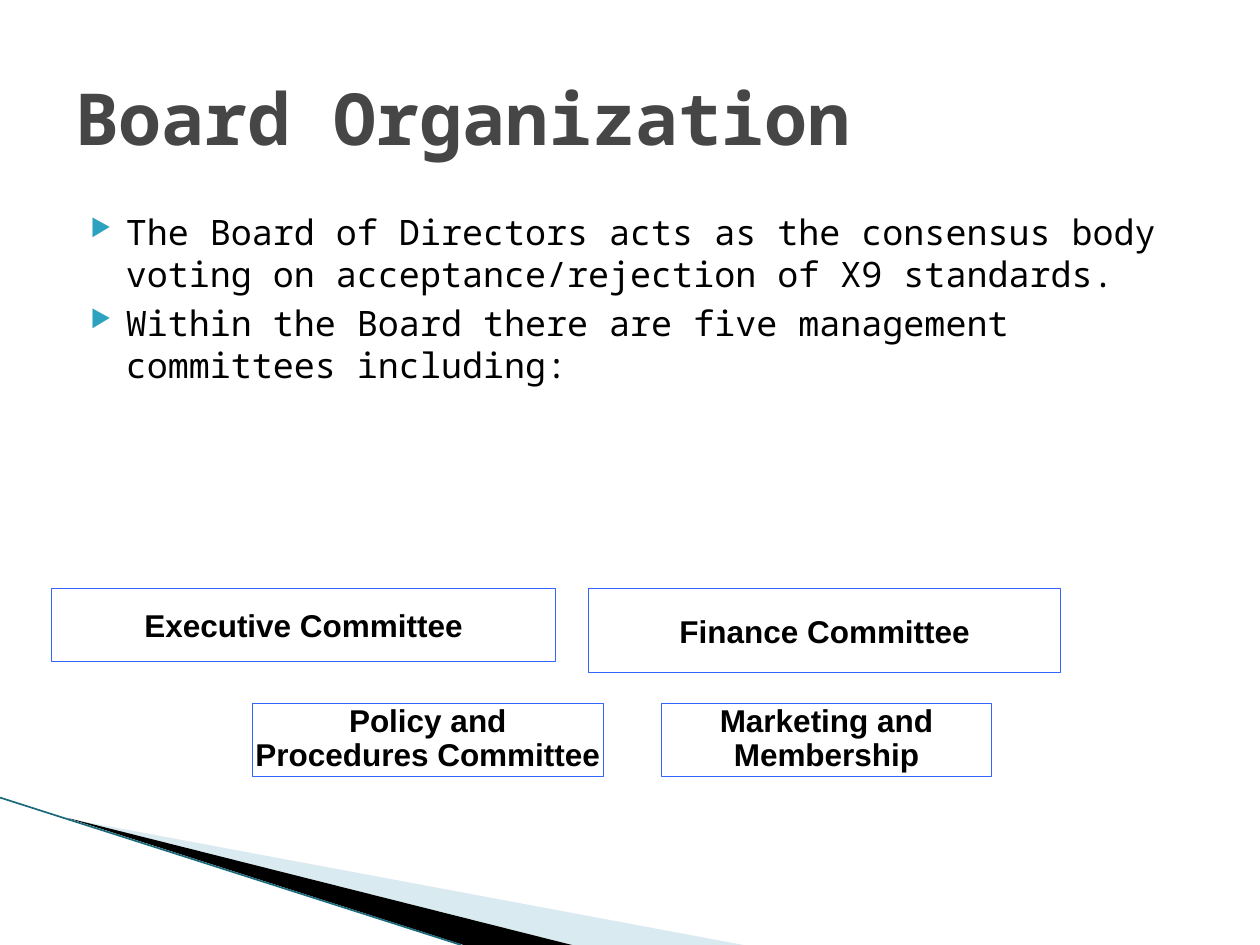
from dataclasses import dataclass

from lxml.etree import SubElement
from pptx import Presentation
from pptx.dml.color import RGBColor
from pptx.enum.shapes import MSO_CONNECTOR, MSO_SHAPE
from pptx.enum.text import MSO_ANCHOR, PP_ALIGN
from pptx.oxml.ns import qn
from pptx.util import Inches, Pt


@dataclass(frozen=True)
class Theme:
    text: RGBColor = RGBColor.from_string("000000")
    title: RGBColor = RGBColor.from_string("464646")
    bullet: str = "2DA2BF"
    box_fill: RGBColor = RGBColor.from_string("FFFFFF")
    box_line: RGBColor = RGBColor.from_string("3366FF")
    pale_wedge: RGBColor = RGBColor.from_string("A0CBDC")
    dark_wedge: RGBColor = RGBColor.from_string("000000")
    edge: RGBColor = RGBColor.from_string("1A6A7C")
    main_font: str = "Noto Sans Mono"
    box_font: str = "Arial"
    title_size: int = 41
    body_size: int = 20
    box_size: int = 18


class SlideBuilder:
    def __init__(self, page, theme):
        self.page = page
        self.theme = theme

    def format_font(self, paragraph, name, size, color, bold=False):
        values = {"name": name, "size": Pt(size), "bold": bold}
        for attribute, value in values.items():
            setattr(paragraph.font, attribute, value)
        paragraph.font.color.rgb = color

    def wedge(self, points, color, opacity=None):
        corners = [(Inches(x), Inches(y)) for x, y in points]
        builder = self.page.shapes.build_freeform(*corners[0], scale=1.0)
        builder.add_line_segments(corners[1:], close=True)
        shape = builder.convert_to_shape()
        shape.shadow.inherit = False
        shape.fill.solid()
        shape.fill.fore_color.rgb = color
        shape.line.fill.background()
        if opacity is not None:
            color_element = shape.fill._xPr.find(f".//{qn('a:srgbClr')}")
            SubElement(color_element, qn("a:alpha"), val=str(opacity * 1000))

    def line(self, start, end, color, width):
        ends = [Inches(value) for value in (*start, *end)]
        connector = self.page.shapes.add_connector(MSO_CONNECTOR.STRAIGHT, *ends)
        connector.line.color.rgb = color
        connector.line.width = Pt(width)
        SubElement(connector._element.spPr, qn("a:effectLst"))

    def title(self, text, left, top, width, height):
        title = self.page.shapes.title
        places = {"left": left, "top": top, "width": width, "height": height}
        for attribute, value in places.items():
            setattr(title, attribute, Inches(value))
        frame = title.text_frame
        frame.text = text
        frame.vertical_anchor = MSO_ANCHOR.MIDDLE
        paragraph = frame.paragraphs[0]
        paragraph.alignment = PP_ALIGN.LEFT
        theme = self.theme
        self.format_font(paragraph, theme.main_font, theme.title_size, theme.title, bold=True)

    def bullet(self, paragraph):
        properties = paragraph._p.get_or_add_pPr()
        properties.set("marL", str(Inches(0.4)))
        properties.set("indent", str(Inches(-0.28)))
        color = SubElement(properties, qn("a:buClr"))
        SubElement(color, qn("a:srgbClr"), val=self.theme.bullet)
        SubElement(properties, qn("a:buSzPct"), val="68000")
        SubElement(properties, qn("a:buChar"), char="▶")

    def bullet_list(self, items, left, top, width, height):
        place = [Inches(value) for value in (left, top, width, height)]
        frame = self.page.shapes.add_textbox(*place).text_frame
        frame.word_wrap = True
        theme = self.theme
        for index, item in enumerate(items):
            paragraph = frame.add_paragraph() if index else frame.paragraphs[0]
            paragraph.text = item
            self.bullet(paragraph)
            if index:
                paragraph.space_before = Pt(4)
            self.format_font(paragraph, theme.main_font, theme.body_size, theme.text)

    def committee(self, name, left, top, width, height):
        place = [Inches(value) for value in (left, top, width, height)]
        box = self.page.shapes.add_shape(MSO_SHAPE.RECTANGLE, *place)
        theme = self.theme
        box.shadow.inherit = False
        box.fill.solid()
        box.fill.fore_color.rgb = theme.box_fill
        box.line.color.rgb = theme.box_line
        box.line.width = Pt(0.5)
        frame = box.text_frame
        frame.text = ""
        frame.word_wrap = False
        frame.vertical_anchor = MSO_ANCHOR.MIDDLE
        for side in ("left", "top", "right", "bottom"):
            setattr(frame, f"margin_{side}", 0)
        paragraph = frame.paragraphs[0]
        paragraph.text = name
        paragraph.alignment = PP_ALIGN.CENTER
        if "\n" in name:
            paragraph.line_spacing = 0.9
        self.format_font(paragraph, theme.box_font, theme.box_size, theme.text, bold=True)


def main():
    deck = Presentation()
    deck.slide_width, deck.slide_height = Inches(10), Inches(7.5)
    theme = Theme()
    slide = SlideBuilder(deck.slides.add_slide(deck.slide_layouts[5]), theme)

    slide.wedge([(0.55, 6.5), (5.9, 7.5), (4.54, 7.5)], theme.pale_wedge, opacity=40)
    slide.wedge([(0.53, 6.49), (4.54, 7.5), (3.68, 7.5)], theme.dark_wedge)
    slide.line((0, 6.33), (3.66, 7.5), theme.edge, 0.95)

    slide.title("Board Organization", 0.5, 0.3, 9, 1.25)
    slide.bullet_list(
        [
            "The Board of Directors acts as the consensus body voting on "
            "acceptance/rejection of X9 standards.",
            "Within the Board there are five management committees including:",
        ],
        0.5, 1.62, 9, 4.95,
    )

    upper_row, lower_row = 4.67, 5.58
    slide.committee("Executive Committee", 0.41, upper_row, 4, 0.58)
    slide.committee("Finance Committee", 4.67, upper_row, 3.75, 0.67)
    slide.committee("Marketing and\nMembership", 5.25, lower_row, 2.62, 0.58)
    slide.committee("Policy and\nProcedures Committee", 2, lower_row, 2.79, 0.58)

    deck.save("out.pptx")


if __name__ == "__main__":
    main()
